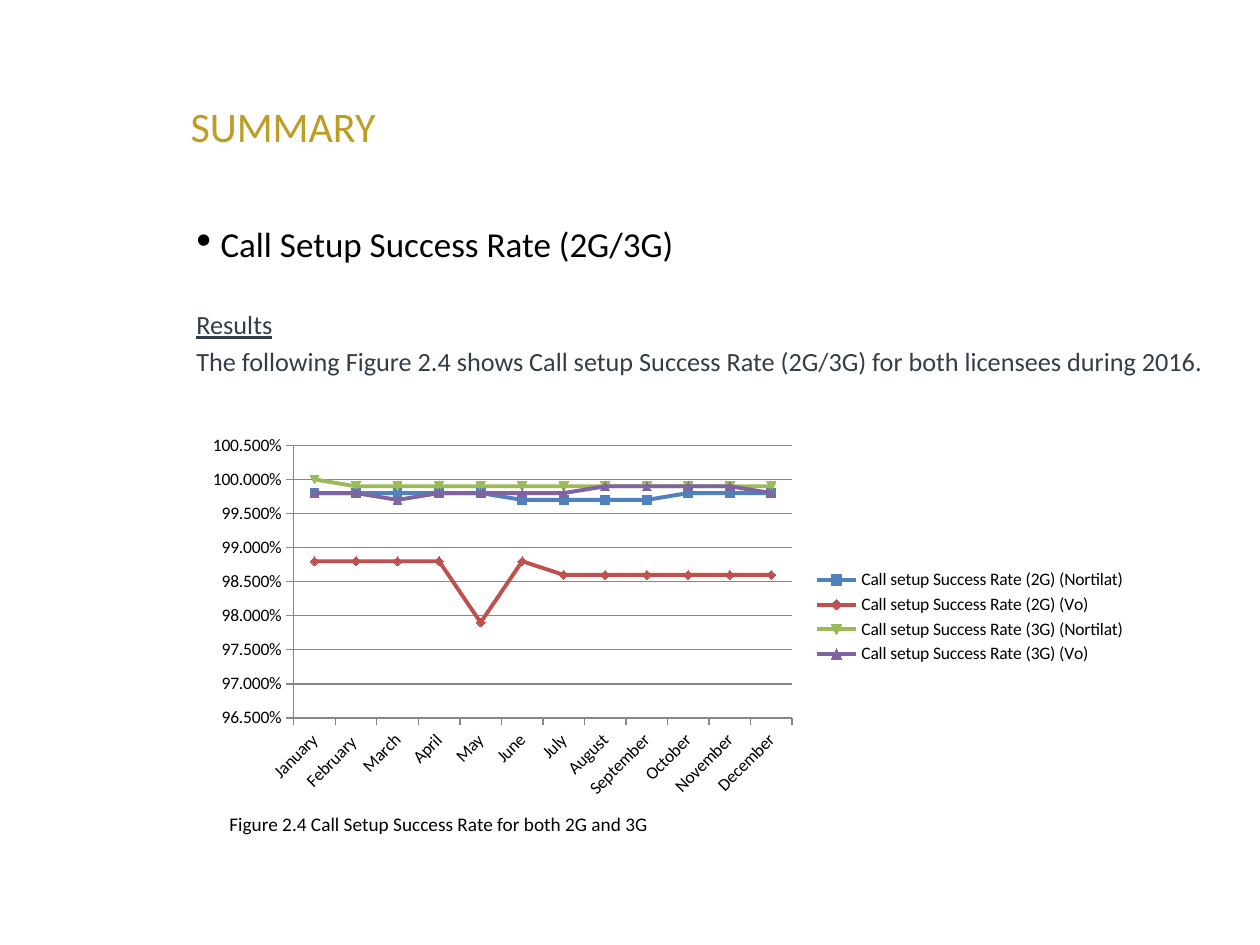
import pptx
import pptx.chart.data
import pptx.dml.color
import pptx.enum.chart
import pptx.enum.text
import pptx.util
import lxml.etree

FONT = "Calibri"
EMU_PER_PX = 914400 / 126
MONTHS = ["January", "February ", "March", "April", "May", "June", "July",
          "August", "September", "October", "November", "December"]
SERIES = [
    ("(2G) (Nortilat)", "4F81BD",
     [0.998, 0.998, 0.998, 0.998, 0.998, 0.997, 0.997, 0.997, 0.997, 0.998, 0.998, 0.998]),
    ("(2G) (Vo)", "C0504D",
     [0.988, 0.988, 0.988, 0.988, 0.979, 0.988, 0.986, 0.986, 0.986, 0.986, 0.986, 0.986]),
    ("(3G) (Nortilat)", "9BBB59",
     [1, 0.999, 0.999, 0.999, 0.999, 0.999, 0.999, 0.999, 0.999, 0.999, 0.999, 0.999]),
    ("(3G) (Vo)", "8064A2",
     [0.998, 0.998, 0.997, 0.998, 0.998, 0.998, 0.998, 0.999, 0.999, 0.999, 0.999, 0.998]),
]


def px(value):
    return pptx.util.Emu(round(value * EMU_PER_PX))


def color(value):
    return pptx.dml.color.RGBColor.from_string(value)


def format_font(font, size, font_color):
    font.name = FONT
    font.size = pptx.util.Pt(size)
    font.color.rgb = color(font_color)


def add_title(slide, text):
    title = slide.shapes.title
    title.left, title.top, title.width, title.height = map(px, (178, 94, 217, 63))
    frame = title.text_frame
    frame.text = text
    frame.word_wrap = False
    frame.vertical_anchor = pptx.enum.text.MSO_ANCHOR.TOP
    paragraph = frame.paragraphs[0]
    paragraph.alignment = pptx.enum.text.PP_ALIGN.LEFT
    format_font(paragraph.runs[0].font, 24, "BF9D25")


def add_text_box(slide, left, top, width, height):
    box = slide.shapes.add_textbox(px(left), px(top), px(width), px(height))
    box.text_frame.word_wrap = True
    return box.text_frame


def set_indent(paragraph, bullet=None):
    properties = paragraph._p.get_or_add_pPr()
    properties.set("marL", str(px(63)))
    properties.set("indent", "0")
    if bullet:
        font = lxml.etree.SubElement(properties, pptx.oxml.ns.qn("a:buFont"))
        font.set("typeface", "Arial")
        character = lxml.etree.SubElement(properties, pptx.oxml.ns.qn("a:buChar"))
        character.set("char", bullet)


def add_body(slide):
    frame = add_text_box(slide, 121, 209, 1103, 624)
    heading = frame.paragraphs[0]
    set_indent(heading, "•")
    for text, size in ((" ", 24), ("Call Setup Success Rate (2G/3G)", 20)):
        run = heading.add_run()
        run.text = text
        format_font(run.font, size, "000000")
    for text, space, underline in (
        ("Results", 24.5, True),
        ("The following Figure 2.4 shows Call setup Success Rate (2G/3G) "
         "for both licensees during 2016.", 3, False),
    ):
        paragraph = frame.add_paragraph()
        paragraph.text = text
        set_indent(paragraph)
        paragraph.space_before = pptx.util.Pt(space)
        font = paragraph.runs[0].font
        format_font(font, 15, "333D47")
        font.underline = underline


def add_caption(slide, text):
    frame = add_text_box(slide, 217, 806, 630, 37)
    frame.text = text
    format_font(frame.paragraphs[0].runs[0].font, 11, "000000")


def format_line(line, width, line_color):
    line.width = pptx.util.Pt(width)
    line.color.rgb = color(line_color)


def add_chart(slide):
    data = pptx.chart.data.CategoryChartData(number_format="0.000%")
    data.categories = MONTHS
    for name, _, values in SERIES:
        data.add_series(f"Call setup Success Rate {name}", values)
    chart = slide.shapes.add_chart(
        pptx.enum.chart.XL_CHART_TYPE.LINE_MARKERS,
        px(194), px(428), px(945), px(378), data).chart
    format_font(chart.font, 10, "000000")
    chart.has_title = False
    chart.has_legend = True
    chart.legend.position = pptx.enum.chart.XL_LEGEND_POSITION.RIGHT
    chart.legend.include_in_layout = False
    chart.plots[0].vary_by_categories = False

    value_axis = chart.value_axis
    value_axis.minimum_scale = 0.965
    value_axis.maximum_scale = 1.005
    value_axis.major_unit = 0.005
    value_axis.tick_labels.number_format = "0.000%"
    value_axis.tick_labels.number_format_is_linked = False
    value_axis.has_major_gridlines = True
    format_line(value_axis.major_gridlines.format.line, 0.75, "878787")
    for axis in (value_axis, chart.category_axis):
        axis.major_tick_mark = pptx.enum.chart.XL_TICK_MARK.OUTSIDE
        format_line(axis.format.line, 0.75, "878787")

    for series, (_, series_color, _) in zip(chart.plots[0].series, SERIES):
        series.smooth = False
        format_line(series.format.line, 2.25, series_color)
        marker = series.marker
        marker.size = 5
        marker.format.fill.solid()
        marker.format.fill.fore_color.rgb = color(series_color)
        format_line(marker.format.line, 0.75, series_color)


def main():
    presentation = pptx.Presentation()
    presentation.slide_width = px(1260)
    presentation.slide_height = px(945)
    slide = presentation.slides.add_slide(presentation.slide_layouts[5])
    add_body(slide)
    add_caption(slide, "Figure 2.4 Call Setup Success Rate for both 2G and 3G")
    add_title(slide, "SUMMARY")
    add_chart(slide)
    presentation.save("out.pptx")


if __name__ == "__main__":
    main()
